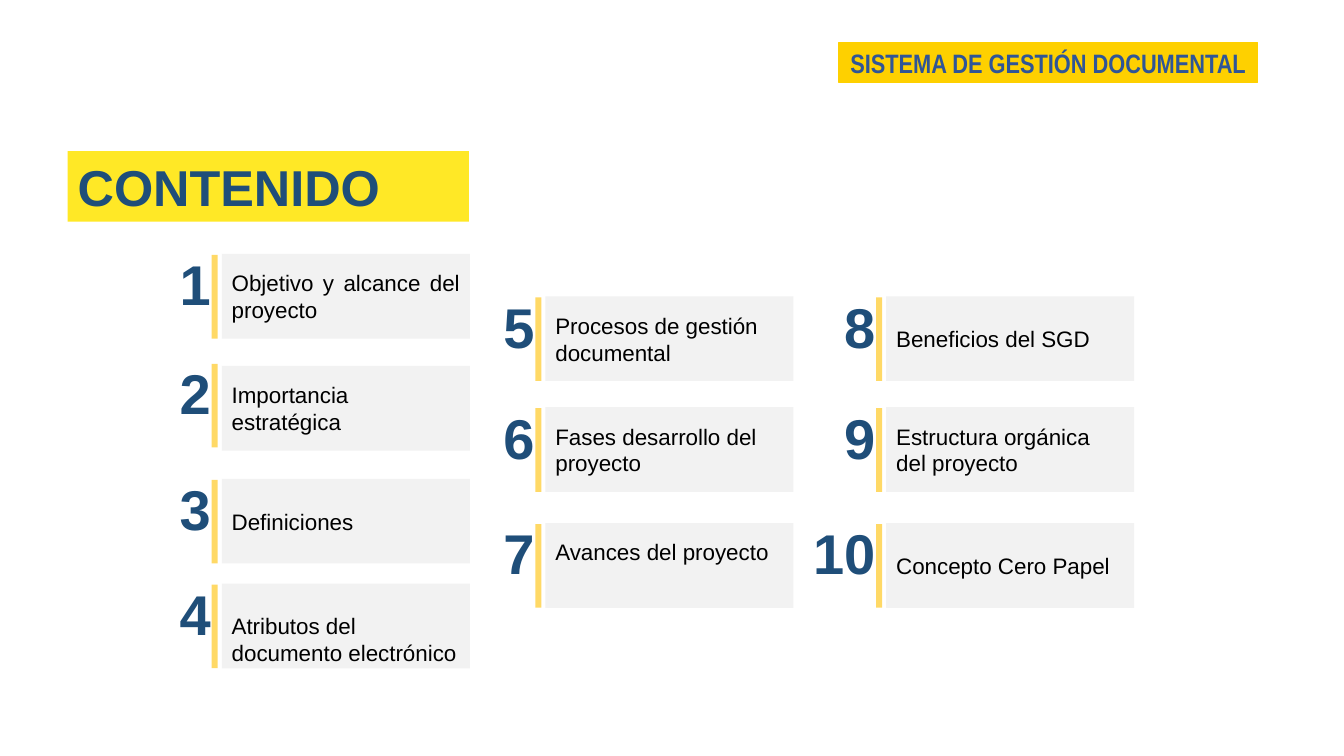
from dataclasses import dataclass

from pptx import Presentation
from pptx.dml.color import RGBColor
from pptx.enum.shapes import MSO_SHAPE
from pptx.enum.text import MSO_ANCHOR, MSO_AUTO_SIZE, PP_ALIGN
from pptx.util import Inches, Pt


@dataclass(frozen=True)
class Theme:
    font: str = "Arial"
    banner_font: str = "Arial Narrow"
    navy: str = "1F4E79"
    banner_blue: str = "2F5597"
    black: str = "000000"
    title_yellow: str = "FFE826"
    banner_yellow: str = "FED000"
    bar_yellow: str = "FFD966"
    card_gray: str = "F2F2F2"
    title_size: float = 36
    number_size: float = 40
    card_size: float = 16
    banner_size: float = 19


@dataclass(frozen=True)
class Topic:
    text: str
    bar_top: float
    card_shift: float = -0.01
    anchor: MSO_ANCHOR = MSO_ANCHOR.MIDDLE
    align: PP_ALIGN = PP_ALIGN.LEFT
    top_inset: float = 0.05
    bottom_inset: float = 0.05


THEME = Theme()
ROWS = (2.95, 4.05, 5.2)
COLUMNS = (
    (2.1, (
        Topic("Objetivo y alcance del proyecto", 2.53, align=PP_ALIGN.JUSTIFY),
        Topic("Importancia estratégica", 3.61, card_shift=0.02),
        Topic("Definiciones", 4.76),
        Topic("Atributos del documento electrónico", 5.8,
              anchor=MSO_ANCHOR.BOTTOM, bottom_inset=0.02),
    )),
    (5.31, (
        Topic("Procesos de gestión documental", ROWS[0]),
        Topic("Fases desarrollo del proyecto", ROWS[1]),
        Topic("Avances del proyecto", ROWS[2],
              anchor=MSO_ANCHOR.TOP, top_inset=0.15),
    )),
    (8.69, (
        Topic("Beneficios del SGD", ROWS[0]),
        Topic("Estructura orgánica del proyecto", ROWS[1]),
        Topic("Concepto Cero Papel", ROWS[2]),
    )),
)


def write_text(shape, text, size, color, font=THEME.font, bold=False,
               align=PP_ALIGN.LEFT, anchor=MSO_ANCHOR.MIDDLE):
    text_frame = shape.text_frame
    text_frame.text = text
    text_frame.word_wrap = True
    text_frame.vertical_anchor = anchor
    paragraph = text_frame.paragraphs[0]
    paragraph.alignment = align
    run_font = paragraph.runs[0].font
    run_font.name = font
    run_font.size = Pt(size)
    run_font.bold = bold
    run_font.color.rgb = RGBColor.from_string(color)


def fill_shape(shape, color):
    shape.fill.solid()
    shape.fill.fore_color.rgb = RGBColor.from_string(color)


def add_rectangle(slide, left, top, width, height, color):
    shape = slide.shapes.add_shape(
        MSO_SHAPE.RECTANGLE, Inches(left), Inches(top), Inches(width), Inches(height))
    shape.shadow.inherit = False
    fill_shape(shape, color)
    shape.line.fill.background()
    return shape


def add_number(slide, number, bar_left, bar_top):
    width = 0.51 if number < 10 else 0.83
    shape = slide.shapes.add_textbox(
        Inches(bar_left + 0.09 - width), Inches(bar_top - 0.1),
        Inches(width), Inches(0.77))
    write_text(shape, str(number), THEME.number_size, THEME.navy, bold=True,
               align=PP_ALIGN.RIGHT, anchor=MSO_ANCHOR.TOP)
    shape.text_frame.word_wrap = False
    shape.text_frame.auto_size = MSO_AUTO_SIZE.SHAPE_TO_FIT_TEXT


def add_topic(slide, number, bar_left, topic):
    add_rectangle(slide, bar_left, topic.bar_top, 0.06, 0.83, THEME.bar_yellow)
    add_number(slide, number, bar_left, topic.bar_top)
    card = add_rectangle(slide, bar_left + 0.1, topic.bar_top + topic.card_shift,
                         2.46, 0.84, THEME.card_gray)
    write_text(card, topic.text, THEME.card_size, THEME.black,
               align=topic.align, anchor=topic.anchor)
    card.text_frame.margin_top = Inches(topic.top_inset)
    card.text_frame.margin_bottom = Inches(topic.bottom_inset)


def set_title(slide, text):
    title = slide.shapes.title
    title.left, title.top = Inches(0.67), Inches(1.5)
    title.width, title.height = Inches(3.98), Inches(0.7)
    fill_shape(title, THEME.title_yellow)
    write_text(title, text, THEME.title_size, THEME.navy, bold=True)
    title.text_frame.auto_size = MSO_AUTO_SIZE.NONE


def add_banner(slide, text):
    banner = add_rectangle(slide, 8.32, 0.42, 4.15, 0.4, THEME.banner_yellow)
    banner.line.color.rgb = RGBColor.from_string(THEME.banner_yellow)
    banner.line.width = Pt(1)
    write_text(banner, text, THEME.banner_size, THEME.banner_blue,
               font=THEME.banner_font, bold=True, align=PP_ALIGN.CENTER)


def main():
    presentation = Presentation()
    presentation.slide_width = Inches(13.33)
    presentation.slide_height = Inches(7.5)
    slide = presentation.slides.add_slide(presentation.slide_layouts[5])
    set_title(slide, "CONTENIDO")
    number = 1
    for bar_left, topics in COLUMNS:
        for number, topic in enumerate(topics, number):
            add_topic(slide, number, bar_left, topic)
        number += 1
    add_banner(slide, "SISTEMA DE GESTIÓN DOCUMENTAL")
    presentation.save("out.pptx")


if __name__ == "__main__":
    main()
